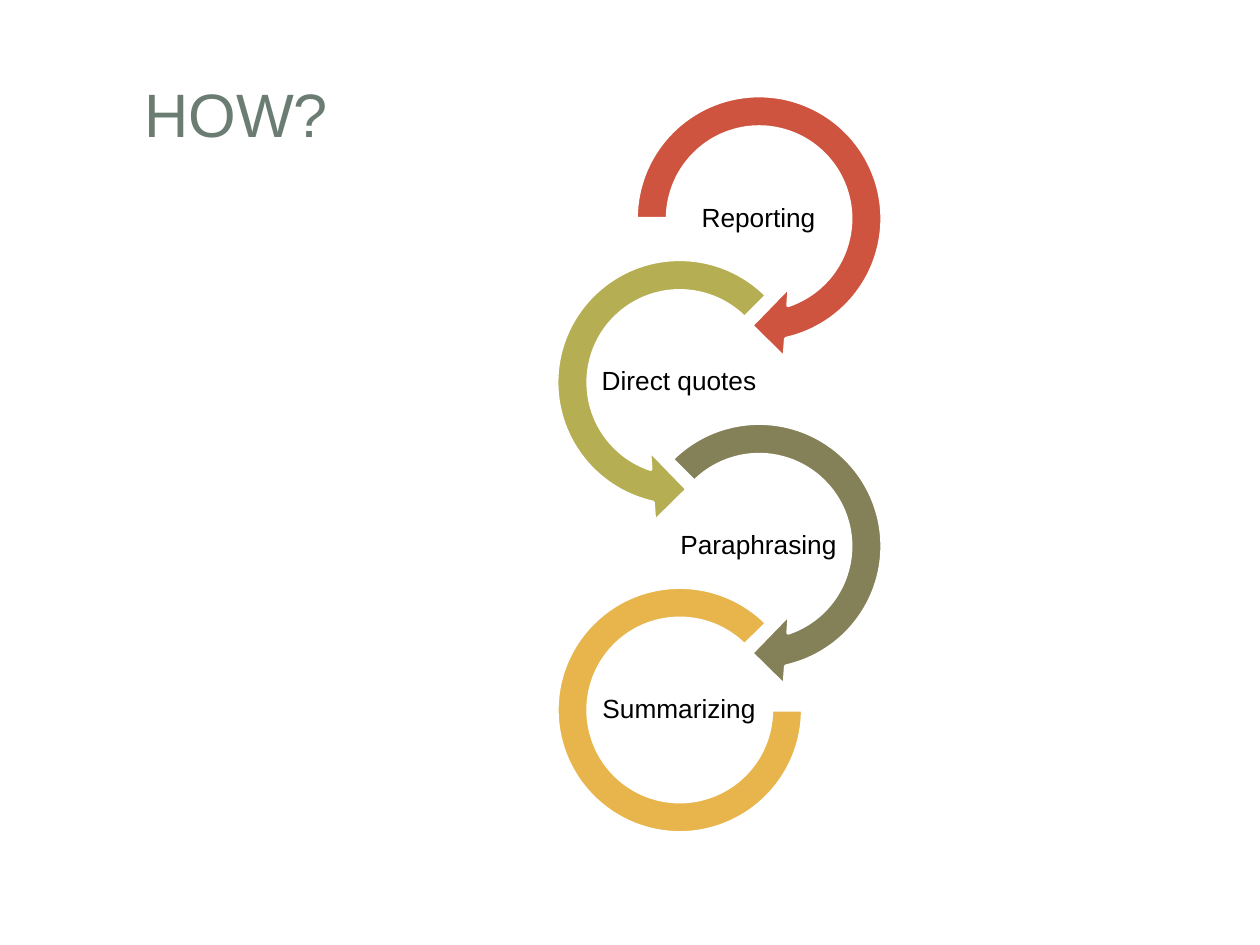
from dataclasses import dataclass

from pptx import Presentation
from pptx.dml.color import RGBColor
from pptx.enum.shapes import MSO_SHAPE
from pptx.enum.text import MSO_ANCHOR, PP_ALIGN
from pptx.util import Inches, Pt

RIGHT_ARROW = MSO_SHAPE.CIRCULAR_ARROW
LEFT_ARROW = MSO_SHAPE.LEFT_CIRCULAR_ARROW
END_ARC = MSO_SHAPE.BLOCK_ARC
CENTER = PP_ALIGN.CENTER
MIDDLE = MSO_ANCHOR.MIDDLE

FONT = "Arial"
WHITE, BLACK, TITLE_GREEN = "FFFFFF", "000000", "6B7D72"

# Grid of the winding chain, in inches
CHAIN_LEFT, CHAIN_TOP = 4.26, 0.6
COLUMN_STEP, ROW_STEP = 0.63, 1.3
RING_SIZE = 2.27
LABEL_LEFT, LABEL_TOP = 0.5, 0.82
LABEL_WIDTH, LABEL_HEIGHT = 1.26, 0.63


@dataclass
class Step:
    label: str
    column: int
    ring: MSO_SHAPE
    color: str
    adjustments: tuple[float, ...]
    inset: float = 0


STEPS = [
    Step("Reporting", 1, RIGHT_ARROW, "CF543F", (0.11, 11.42, 45, 108, 0.125)),
    Step("Direct quotes", 0, LEFT_ARROW, "B5AE53", (0.11, 11.42, 63, 189, 0.125)),
    Step("Paraphrasing", 1, RIGHT_ARROW, "848058", (0.11, 11.42, 45, 135, 0.125)),
    Step("Summarizing", 0, END_ARC, "E8B54D", (0, 189, 0.127), inset=0.16),
]


def rgb(color: str) -> RGBColor:
    return RGBColor.from_string(color)


def write_text(frame, text: str, size: float, color: str) -> None:
    frame.text = text
    frame.word_wrap = True
    frame.vertical_anchor = MIDDLE
    paragraph = frame.paragraphs[0]
    paragraph.alignment = CENTER
    font = paragraph.runs[0].font
    font.name, font.size = FONT, Pt(size)
    font.color.rgb = rgb(color)


def draw_title(slide, text: str) -> None:
    title = slide.shapes.title
    title.left, title.top = Inches(0.25), Inches(0.33)
    title.width, title.height = Inches(3.25), Inches(1.14)
    write_text(title.text_frame, text, 35, TITLE_GREEN)


def draw_step(slide, step: Step, row: int) -> None:
    left = CHAIN_LEFT + step.column * COLUMN_STEP
    top = CHAIN_TOP + row * ROW_STEP

    # Ring
    size = Inches(RING_SIZE - 2 * step.inset)
    ring = slide.shapes.add_shape(
        step.ring, Inches(left + step.inset), Inches(top + step.inset), size, size)
    for index, value in enumerate(step.adjustments):
        ring.adjustments[index] = value
    ring.shadow.inherit = False
    ring.fill.solid()
    ring.fill.fore_color.rgb = rgb(step.color)
    ring.line.color.rgb = rgb(WHITE)
    ring.line.width = Pt(2)

    # Label
    label = slide.shapes.add_textbox(
        Inches(left + LABEL_LEFT), Inches(top + LABEL_TOP),
        Inches(LABEL_WIDTH), Inches(LABEL_HEIGHT))
    frame = label.text_frame
    frame.margin_left = frame.margin_right = Inches(0.01)
    frame.margin_top = frame.margin_bottom = Inches(0.01)
    write_text(frame, step.label, 15, BLACK)
    frame.paragraphs[0].line_spacing = 0.9


def main() -> None:
    presentation = Presentation()
    presentation.slide_width, presentation.slide_height = Inches(10), Inches(7.5)
    slide = presentation.slides.add_slide(presentation.slide_layouts[5])
    draw_title(slide, "HOW?")
    for row, step in enumerate(STEPS):
        draw_step(slide, step, row)
    presentation.save("out.pptx")


if __name__ == "__main__":
    main()
